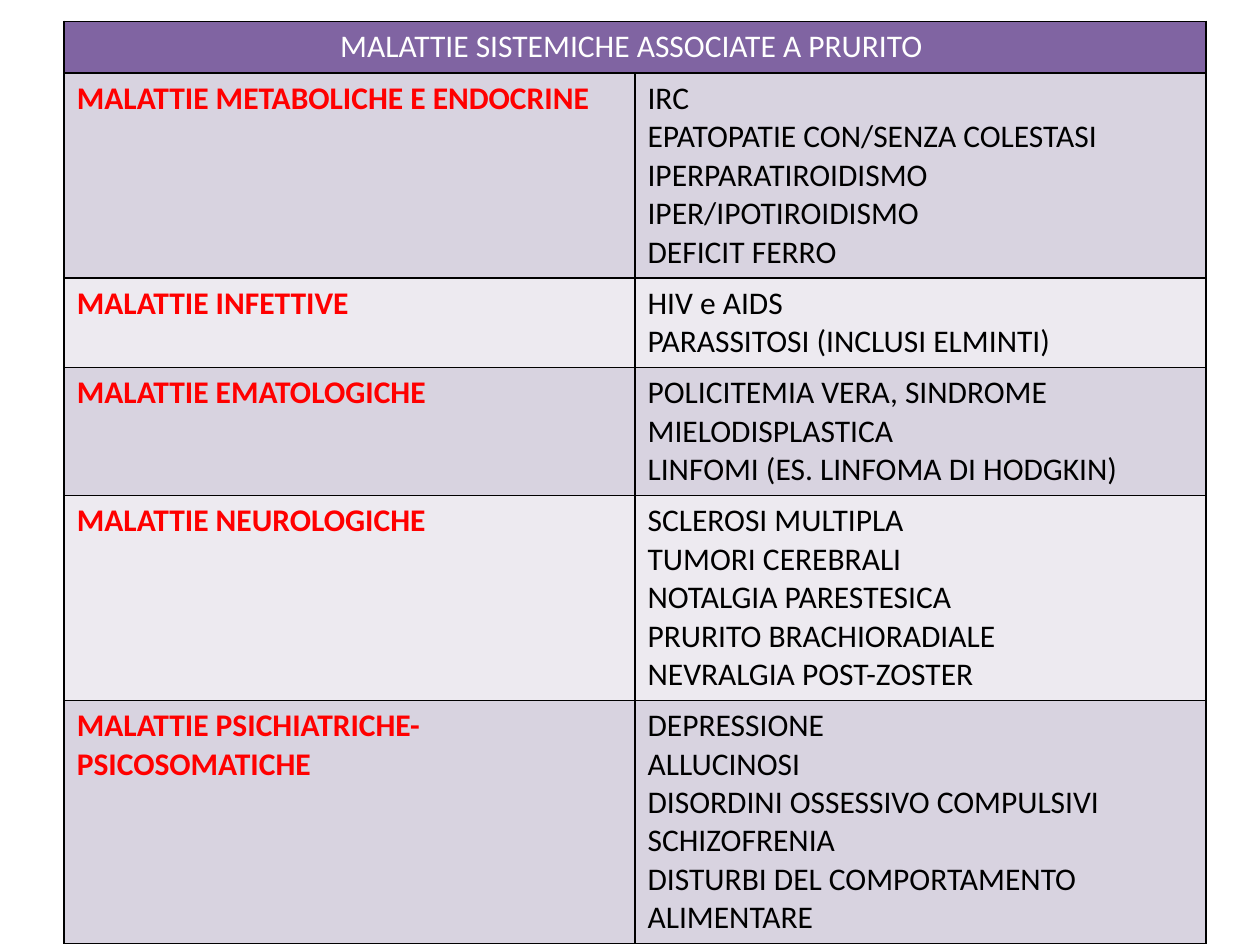
from dataclasses import dataclass

from lxml.etree import SubElement
from pptx import Presentation
from pptx.dml.color import RGBColor
from pptx.enum.text import PP_ALIGN as Align
from pptx.oxml.ns import qn
from pptx.table import _Cell as Cell
from pptx.util import Inches, Pt

TITLE = "MALATTIE SISTEMICHE ASSOCIATE A PRURITO "
TITLE_HEIGHT = 0.41
COLUMN_WIDTH = 4.53
BLACK, WHITE, RED, PURPLE = "000000", "FFFFFF", "FF0000", "8064A2"
BANDS = ("D8D3E0", "EDEAF0")


@dataclass
class DiseaseGroup:
    name: str
    height: float
    diseases: list[str]


GROUPS = [
    DiseaseGroup("MALATTIE METABOLICHE E ENDOCRINE", 1.6, [
        "IRC",
        "EPATOPATIE CON/SENZA COLESTASI",
        "IPERPARATIROIDISMO",
        "IPER/IPOTIROIDISMO",
        "DEFICIT FERRO",
    ]),
    DiseaseGroup("MALATTIE INFETTIVE", 0.7, [
        "HIV e AIDS",
        "PARASSITOSI (INCLUSI ELMINTI)",
    ]),
    DiseaseGroup("MALATTIE EMATOLOGICHE", 1.0, [
        "POLICITEMIA VERA, SINDROME MIELODISPLASTICA",
        "LINFOMI (ES. LINFOMA DI HODGKIN)",
    ]),
    DiseaseGroup("MALATTIE NEUROLOGICHE", 1.6, [
        "SCLEROSI MULTIPLA",
        "TUMORI CEREBRALI",
        "NOTALGIA PARESTESICA",
        "PRURITO BRACHIORADIALE",
        "NEVRALGIA POST-ZOSTER",
    ]),
    DiseaseGroup("MALATTIE PSICHIATRICHE-PSICOSOMATICHE", 1.9, [
        "DEPRESSIONE",
        "ALLUCINOSI",
        "DISORDINI OSSESSIVO COMPULSIVI",
        "SCHIZOFRENIA",
        "DISTURBI DEL COMPORTAMENTO ALIMENTARE",
    ]),
]


def color(value: str) -> RGBColor:
    return RGBColor.from_string(value)


def style_cell(cell: Cell, fill: str) -> None:
    """Draw the four borders, then the fill that must follow them in the XML."""
    properties = cell._tc.get_or_add_tcPr()
    for side in ("a:lnL", "a:lnR", "a:lnT", "a:lnB"):
        line = SubElement(properties, qn(side), w=str(Pt(1)))
        SubElement(SubElement(line, qn("a:solidFill")), qn("a:srgbClr"), val=BLACK)
    cell.fill.solid()
    cell.fill.fore_color.rgb = color(fill)


def write_cell(cell: Cell, lines: list[str], font_color: str,
               bold: bool = False, align: Align = Align.LEFT) -> None:
    cell.margin_left = cell.margin_right = Inches(0.1)
    cell.margin_top = cell.margin_bottom = Inches(0.05)
    cell.text_frame.text = "\n".join(lines)
    for paragraph in cell.text_frame.paragraphs:
        paragraph.alignment = align
        for run in paragraph.runs:
            run.font.name = "Calibri"
            run.font.size = Pt(18)
            run.font.bold = bold
            run.font.color.rgb = color(font_color)


def main() -> None:
    presentation = Presentation()
    presentation.slide_width, presentation.slide_height = Inches(10), Inches(7.5)
    slide = presentation.slides.add_slide(presentation.slide_layouts[6])

    # Table grid
    heights = [TITLE_HEIGHT] + [group.height for group in GROUPS]
    table = slide.shapes.add_table(
        len(heights), 2, Inches(0.51), Inches(0.17),
        Inches(2 * COLUMN_WIDTH), Inches(sum(heights))).table
    for column in table.columns:
        column.width = Inches(COLUMN_WIDTH)
    for row, height in zip(table.rows, heights):
        row.height = Inches(height)

    # Title row across both columns
    title_cell = table.cell(0, 0)
    title_cell.merge(table.cell(0, 1))
    for cell in table.rows[0].cells:
        style_cell(cell, PURPLE)
    write_cell(title_cell, [TITLE], WHITE, align=Align.CENTER)

    # One banded row per disease group
    for index, group in enumerate(GROUPS):
        name_cell, diseases_cell = table.rows[index + 1].cells
        for cell in (name_cell, diseases_cell):
            style_cell(cell, BANDS[index % 2])
        write_cell(name_cell, [group.name], RED, bold=True)
        write_cell(diseases_cell, group.diseases, BLACK)

    presentation.save("out.pptx")


if __name__ == "__main__":
    main()
